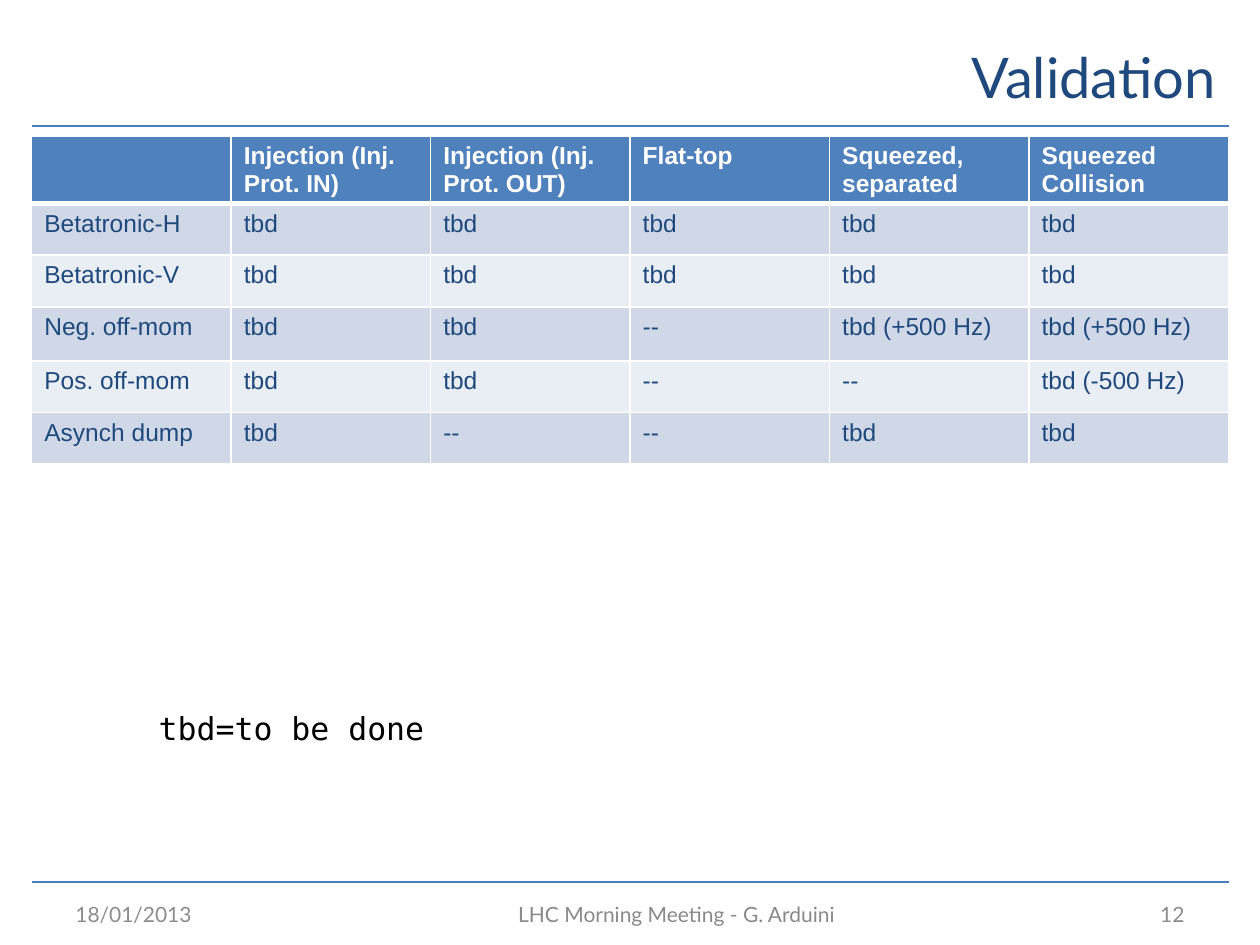
import pptx
import pptx.dml.color
import pptx.enum.shapes
import pptx.enum.text
import pptx.oxml
import pptx.oxml.ns
import pptx.util
from lxml import etree

Cm = pptx.util.Cm
Pt = pptx.util.Pt
ALIGN = pptx.enum.text.PP_ALIGN
ANCHOR = pptx.enum.text.MSO_ANCHOR

NAVY = "1F497D"
WHITE = "FFFFFF"
HEADER_FILL = "4F81BD"
BAND_FILLS = ("D0D8E8", "E9EDF4")

MARGIN, CONTENT_WIDTH = 0.64, 24.13
ROW_HEIGHTS = (1.04, 1.04, 1.04, 1.09, 1.04, 1.04)
ROWS = (
    ("", "Injection (Inj. Prot. IN)", "Injection (Inj. Prot. OUT)",
     "Flat-top", "Squeezed, separated", "Squeezed Collision"),
    ("Betatronic-H", "tbd", "tbd", "tbd", "tbd", "tbd"),
    ("Betatronic-V", "tbd", "tbd", "tbd", "tbd", "tbd"),
    ("Neg. off-mom", "tbd", "tbd", "--", "tbd (+500 Hz)", "tbd (+500 Hz)"),
    ("Pos. off-mom", "tbd", "tbd", "--", "--", "tbd (-500 Hz)"),
    ("Asynch dump", "tbd", "--", "--", "tbd", "tbd"),
)


def color(value):
    return pptx.dml.color.RGBColor.from_string(value)


def write(text_frame, text, font, size, fill, align=ALIGN.LEFT, bold=False):
    paragraph = text_frame.paragraphs[0]
    paragraph.alignment = align
    run = paragraph.add_run()
    run.text = text
    run.font.name = font
    run.font.size = Pt(size)
    run.font.bold = bold
    run.font.color.rgb = color(fill)


def place(shape, left, top, width, height):
    shape.left, shape.top = Cm(left), Cm(top)
    shape.width, shape.height = Cm(width), Cm(height)


def add_text(slide, box, anchor, *style):
    shape = slide.shapes.add_textbox(*(Cm(length) for length in box))
    shape.text_frame.word_wrap = True
    shape.text_frame.vertical_anchor = anchor
    write(shape.text_frame, *style)


def add_rule(slide, left, top, width):
    line = slide.shapes.add_connector(
        pptx.enum.shapes.MSO_CONNECTOR.STRAIGHT,
        Cm(left), Cm(top), Cm(left + width), Cm(top))
    line.line.color.rgb = color("4B7EBC")
    line.line.width = Pt(1.5)
    etree.SubElement(line._element.spPr, pptx.oxml.ns.qn("a:effectLst"))


def set_borders(cell, **widths):
    """Draw white borders; sides come in the order L, R, T, B."""
    properties = cell._tc.get_or_add_tcPr()
    for side, width in widths.items():
        properties.append(pptx.oxml.parse_xml(
            f'<a:ln{side} {pptx.oxml.ns.nsdecls("a")} w="{Pt(width)}">'
            f'<a:solidFill><a:srgbClr val="{WHITE}"/></a:solidFill></a:ln{side}>'))


def add_header(slide, left, top, width):
    title = slide.shapes.title
    place(title, left + 3.81, top, width - 3.81, 2.21)
    title.text_frame.vertical_anchor = ANCHOR.MIDDLE
    write(title.text_frame, "Validation", "Lato", 32, NAVY, ALIGN.RIGHT)
    add_rule(slide, left, top + 2.11, width)


def add_validation_table(slide, left, top, width):
    table = slide.shapes.add_table(
        len(ROWS), len(ROWS[0]), Cm(left), Cm(top), Cm(width),
        Cm(sum(ROW_HEIGHTS))).table
    table.first_row = table.horz_banding = False
    for column in table.columns:
        column.width = Cm(width / len(ROWS[0]))
    for row_index, (texts, height) in enumerate(zip(ROWS, ROW_HEIGHTS)):
        table.rows[row_index].height = Cm(height)
        is_header = row_index == 0
        fill = HEADER_FILL if is_header else BAND_FILLS[(row_index - 1) % 2]
        for column_index, text in enumerate(texts):
            cell = table.cell(row_index, column_index)
            set_borders(cell, L=1, R=1, T=3 if row_index == 1 else 1,
                        B=3 if is_header else 1)
            cell.fill.solid()
            cell.fill.fore_color.rgb = color(fill)
            if text:
                write(cell.text_frame, text, "Arial", 14,
                      WHITE if is_header else NAVY, ALIGN.LEFT, is_header)


def add_footer(slide, left, top, width):
    add_rule(slide, left, top, width)
    entries = (
        (0.63, 5.92, "18/01/2013", "8C8C8C", ALIGN.LEFT),
        (4.01, 17.98, "LHC Morning Meeting - G. Arduini", "898989", ALIGN.CENTER),
        (17.57, 5.92, "12", "8C8C8C", ALIGN.RIGHT),
    )
    for offset, entry_width, text, fill, align in entries:
        add_text(slide, (left + offset, top + 0.43, entry_width, 0.45),
                 ANCHOR.MIDDLE, text, "Lato", 12, fill, align)


def main():
    presentation = pptx.Presentation()
    presentation.slide_width, presentation.slide_height = Cm(25.4), Cm(19.05)
    slide = presentation.slides.add_slide(presentation.slide_layouts[5])
    add_header(slide, MARGIN, 0.43, CONTENT_WIDTH)
    add_validation_table(slide, MARGIN, 2.74, CONTENT_WIDTH)
    # Legend for the table
    add_text(slide, (2.95, 14.17, 12.4, 1.02), ANCHOR.TOP,
             "tbd=to be done", "DejaVu Sans Mono", 18, "000000")
    add_footer(slide, MARGIN, 17.78, CONTENT_WIDTH)
    presentation.save("out.pptx")


if __name__ == "__main__":
    main()
